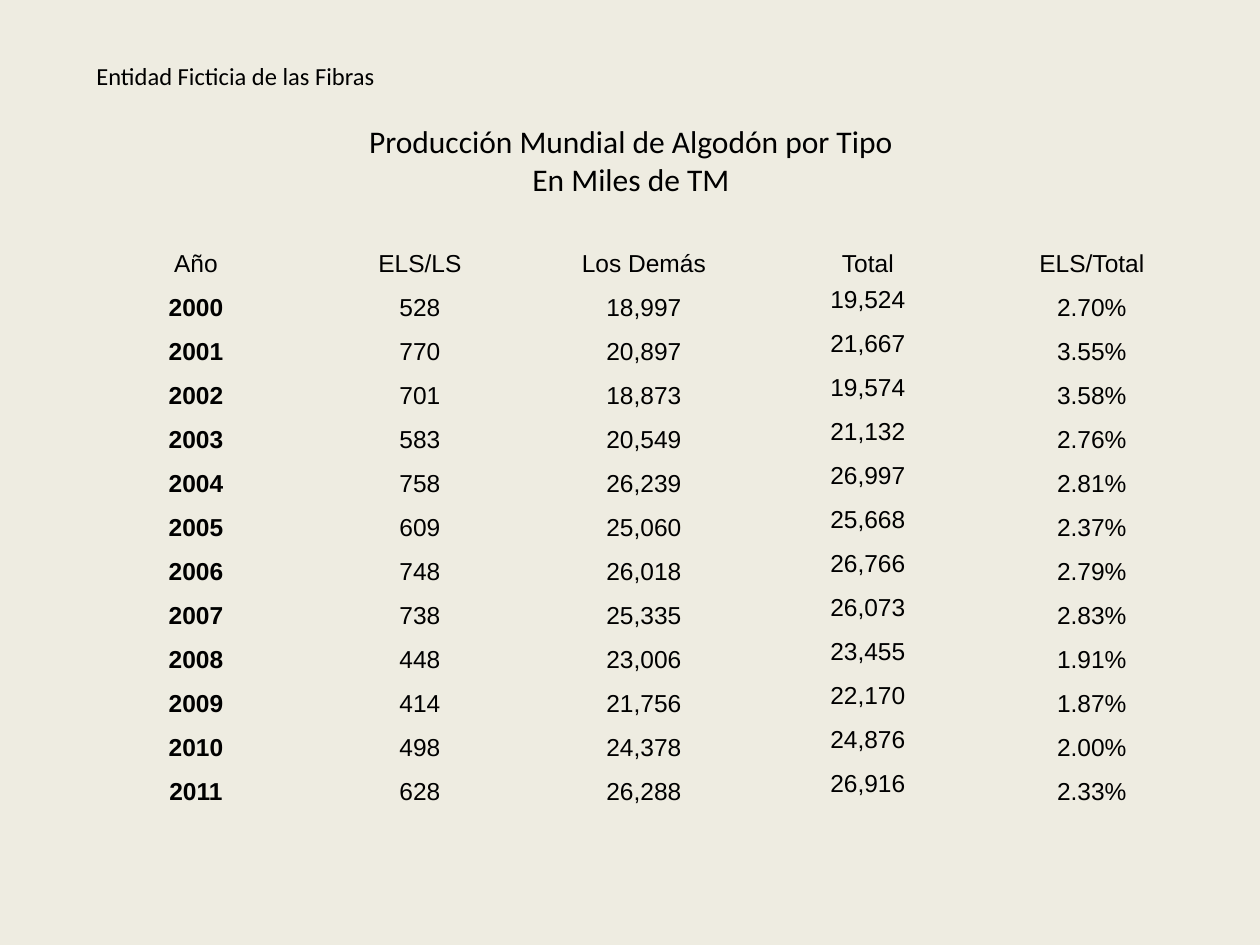
from dataclasses import dataclass

from pptx import Presentation
from pptx.dml.color import RGBColor
from pptx.enum import text
from pptx.util import Pt

PX = 914400 / 126
NO_GRID_STYLE = "{2D5ABB26-0587-4C30-8999-92F81FD0307C}"
BACKGROUND, INK = "EEECE1", "000000"
CENTER, LEFT = text.PP_ALIGN.CENTER, text.PP_ALIGN.LEFT


@dataclass(frozen=True)
class Heading:
    left: int
    top: int
    width: int
    height: int
    lines: str
    size: int
    align: text.PP_ALIGN


@dataclass(frozen=True)
class Harvest:
    year: str
    long_staple: str
    others: str
    total: str
    share: str

    def values(self) -> list[str]:
        return [self.year, self.long_staple, self.others, self.total, self.share]


HEADINGS = [
    Heading(353, 116, 556, 90,
            "Producción Mundial de Algodón por Tipo\nEn Miles de TM", 18, CENTER),
    Heading(84, 55, 326, 43, "Entidad Ficticia de las Fibras", 14, LEFT),
]
COLUMNS = ["Año", "ELS/LS", "Los Demás", "Total", "ELS/Total"]
HARVESTS = [
    Harvest("2000", "528", "18,997", "19,524", "2.70%"),
    Harvest("2001", "770", "20,897", "21,667", "3.55%"),
    Harvest("2002", "701", "18,873", "19,574", "3.58%"),
    Harvest("2003", "583", "20,549", "21,132", "2.76%"),
    Harvest("2004", "758", "26,239", "26,997", "2.81%"),
    Harvest("2005", "609", "25,060", "25,668", "2.37%"),
    Harvest("2006", "748", "26,018", "26,766", "2.79%"),
    Harvest("2007", "738", "25,335", "26,073", "2.83%"),
    Harvest("2008", "448", "23,006", "23,455", "1.91%"),
    Harvest("2009", "414", "21,756", "22,170", "1.87%"),
    Harvest("2010", "498", "24,378", "24,876", "2.00%"),
    Harvest("2011", "628", "26,288", "26,916", "2.33%"),
]
TABLE_LEFT, TABLE_TOP, COLUMN_WIDTH, ROW_HEIGHT = 84, 234, 224, 44


def px(length: int) -> int:
    return round(length * PX)


def color(hex_code: str) -> RGBColor:
    return RGBColor.from_string(hex_code)


def write(frame, content: str, *, size: int = 14, font: str = "Arial",
          bold: bool = False, align: text.PP_ALIGN = CENTER) -> None:
    for index, line in enumerate(content.split("\n")):
        paragraph = frame.add_paragraph() if index else frame.paragraphs[0]
        paragraph.alignment = align
        run = paragraph.add_run()
        run.text = line
        run.font.size = Pt(size)
        run.font.name = font
        run.font.bold = bold
        run.font.color.rgb = color(INK)


def draw_heading(slide, heading: Heading) -> None:
    frame = slide.shapes.add_textbox(
        px(heading.left), px(heading.top), px(heading.width), px(heading.height)
    ).text_frame
    frame.word_wrap = False
    frame.auto_size = text.MSO_AUTO_SIZE.SHAPE_TO_FIT_TEXT
    write(frame, heading.lines, size=heading.size, font="Calibri", align=heading.align)


def draw_production(slide, harvests: list[Harvest]) -> None:
    rows = [COLUMNS] + [harvest.values() for harvest in harvests]
    production = slide.shapes.add_table(
        len(rows), len(COLUMNS), px(TABLE_LEFT), px(TABLE_TOP),
        px(COLUMN_WIDTH * len(COLUMNS)), px(ROW_HEIGHT * len(rows))
    ).table
    production.first_row = production.horz_banding = False
    production._tbl.tblPr.find("{*}tableStyleId").text = NO_GRID_STYLE

    for row_index, values in enumerate(rows):
        production.rows[row_index].height = px(ROW_HEIGHT)
        for column_index, value in enumerate(values):
            cell = production.cell(row_index, column_index)
            cell.fill.background()
            cell.margin_left = cell.margin_right = cell.margin_top = px(1)
            cell.margin_bottom = 0
            # Totals sit mid-row, everything else on the row's bottom edge
            is_total = row_index > 0 and COLUMNS[column_index] == "Total"
            cell.vertical_anchor = (text.MSO_ANCHOR.MIDDLE if is_total
                                    else text.MSO_ANCHOR.BOTTOM)
            write(cell.text_frame, value, bold=row_index > 0 and column_index == 0)


def main() -> None:
    deck = Presentation()
    deck.slide_width, deck.slide_height = px(1260), px(945)
    slide = deck.slides.add_slide(deck.slide_layouts[6])

    # Background
    slide.background.fill.solid()
    slide.background.fill.fore_color.rgb = color(BACKGROUND)

    # Production table
    draw_production(slide, HARVESTS)

    # Title and issuing body
    for heading in HEADINGS:
        draw_heading(slide, heading)

    deck.save("out.pptx")


if __name__ == "__main__":
    main()
